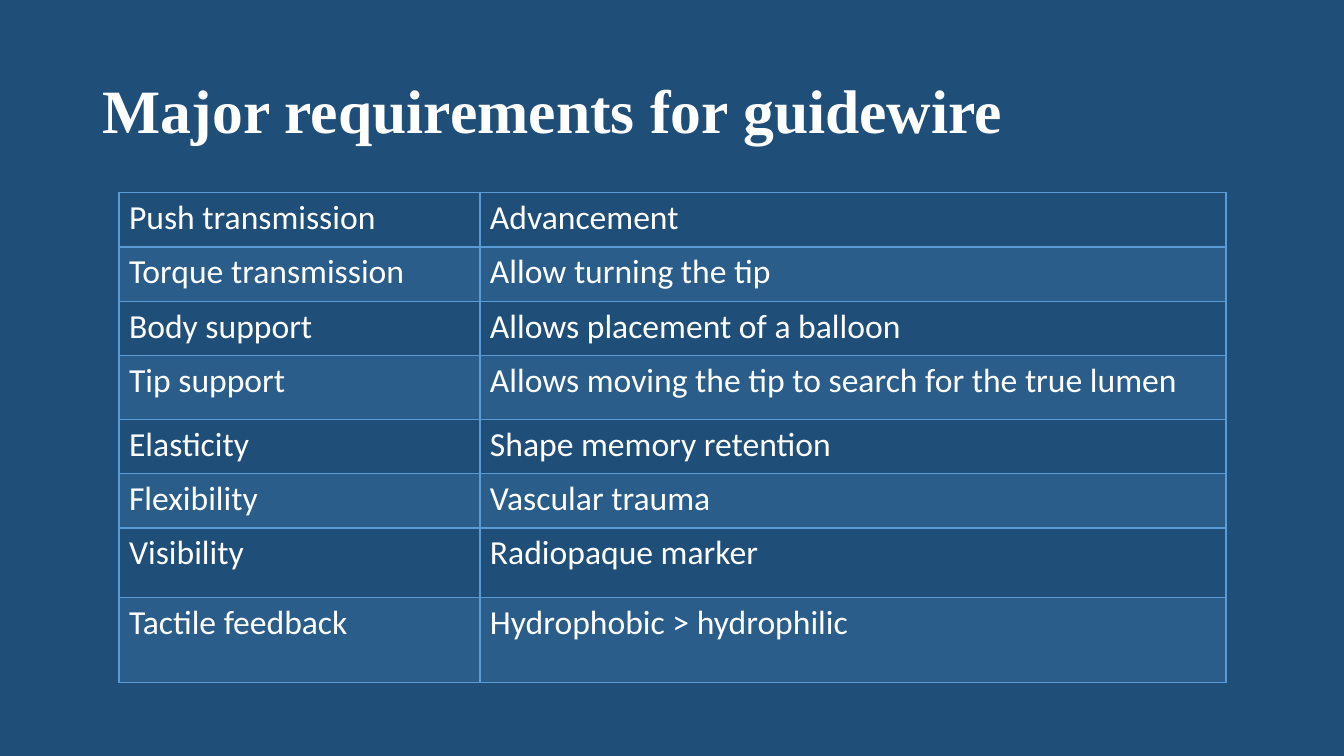
from dataclasses import dataclass

from lxml import etree
from pptx import Presentation
from pptx import util as u
from pptx.dml.color import RGBColor
from pptx.enum import text
from pptx.oxml import ns


@dataclass(frozen=True)
class Theme:
    background: str = "1F4E79"
    ink: str = "FFFFFF"
    accent: str = "5B9BD5"
    band_opacity: int = 20
    title_font: str = "Times New Roman"
    body_font: str = "Calibri"
    title_size: int = 44
    body_size: int = 24
    rule: int = 1
    header_rule: int = 2


REQUIREMENTS = [
    ("Push transmission", "Advancement"),
    ("Torque transmission", "Allow turning the tip"),
    ("Body support", "Allows placement of a balloon"),
    ("Tip support", "Allows moving the tip to search for the true lumen"),
    ("Elasticity", "Shape memory retention"),
    ("Flexibility", "Vascular trauma"),
    ("Visibility", "Radiopaque marker"),
    ("Tactile feedback", "Hydrophobic > hydrophilic"),
]
WIDTH, HEIGHT = 13.33, 7.5
COLUMN_SHARES = [3.58 / WIDTH, 7.4 / WIDTH]
ROW_SHARES = [row / HEIGHT for row in (0.54, 0.54, 0.54, 0.63, 0.54, 0.54, 0.69, 0.84)]


class SlideBuilder:
    """Draws on one page; lengths are shares of the slide's size."""

    def __init__(self, deck, theme):
        self.deck, self.theme = deck, theme
        self.page = deck.slides.add_slide(deck.slide_layouts.get_by_name("Title Only"))
        fill = self.page.background.fill
        fill.solid()
        fill.fore_color.rgb = RGBColor.from_string(theme.background)

    def across(self, share):
        return u.Emu(round(self.deck.slide_width * share))

    def down(self, share):
        return u.Emu(round(self.deck.slide_height * share))

    def add_words(self, frame, words, **font_format):
        para = frame.paragraphs[0]
        span = para.add_run()
        span.text = words
        for name, value in font_format.items():
            setattr(span.font, name, value)
        span.font.color.rgb = RGBColor.from_string(self.theme.ink)
        return para

    def title(self, words, left, top, width, height):
        box = self.page.shapes.title
        place = {"left": self.across(left), "top": self.down(top),
                 "width": self.across(width), "height": self.down(height)}
        for name, value in place.items():
            setattr(box, name, value)
        frame = box.text_frame
        frame.vertical_anchor = text.MSO_ANCHOR.MIDDLE
        para = self.add_words(frame, words, name=self.theme.title_font,
                              size=u.Pt(self.theme.title_size), bold=True)
        para.alignment = text.PP_ALIGN.LEFT
        para.line_spacing = 0.9

    def table(self, rows, left, top, column_shares, row_shares):
        table = self.page.shapes.add_table(
            len(rows), len(column_shares), self.across(left), self.down(top),
            self.across(sum(column_shares)), self.down(sum(row_shares))).table
        table.first_row = table.horz_banding = False
        for column, share in zip(table.columns, column_shares):
            column.width = self.across(share)
        for index, (row, share, words) in enumerate(zip(table.rows, row_shares, rows)):
            row.height = self.down(share)
            for cell, entry in zip(row.cells, words):
                self.add_words(cell.text_frame, entry, name=self.theme.body_font,
                               size=u.Pt(self.theme.body_size))
                self.border(cell, index)
                self.band(cell, index)

    def border(self, cell, row_index):
        theme = self.theme
        widths = dict.fromkeys("LRTB", theme.rule)
        if row_index < 2:
            widths["BT"[row_index]] = theme.header_rule
        for side, width in widths.items():
            line = etree.SubElement(cell._tc.get_or_add_tcPr(), ns.qn(f"a:ln{side}"),
                                    w=str(int(u.Pt(width))))
            solid = etree.SubElement(line, ns.qn("a:solidFill"))
            etree.SubElement(solid, ns.qn("a:srgbClr"), val=theme.accent)

    def band(self, cell, row_index):
        """Tint every second row and leave the others clear."""
        if row_index % 2 == 0:
            cell.fill.background()
            return
        cell.fill.solid()
        cell.fill.fore_color.rgb = RGBColor.from_string(self.theme.accent)
        color = cell._tc.tcPr.find(ns.qn("a:solidFill")).find(ns.qn("a:srgbClr"))
        etree.SubElement(color, ns.qn("a:alpha"), val=str(self.theme.band_opacity * 1000))


def main():
    deck = Presentation()
    deck.slide_width, deck.slide_height = u.Inches(WIDTH), u.Inches(HEIGHT)
    slide = SlideBuilder(deck, Theme())
    slide.title("Major requirements for guidewire",
                0.92 / WIDTH, 0.4 / HEIGHT, 11.5 / WIDTH, 1.45 / HEIGHT)
    slide.table(REQUIREMENTS, 1.18 / WIDTH, 1.91 / HEIGHT, COLUMN_SHARES, ROW_SHARES)
    deck.save("out.pptx")


if __name__ == "__main__":
    main()
